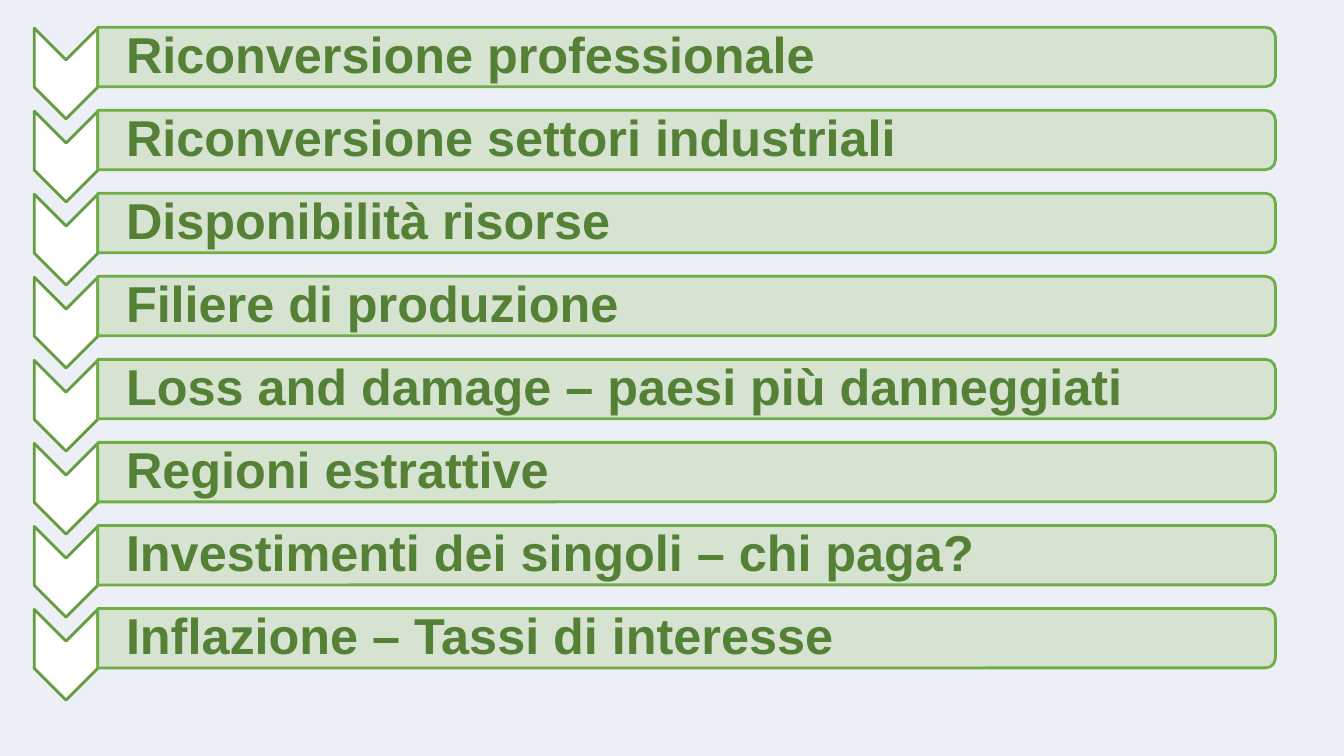
import collections

import pptx
import pptx.dml.color
import pptx.enum.shapes
import pptx.enum.text
import pptx.oxml
import pptx.oxml.ns
import pptx.util

COLORS = {
    "background": "ECF0F6",
    "chevron": "FFFFFF",
    "chevron line": "659C40",
    "bar": "D4E2CE",
    "bar line": "70AD47",
    "text": "548135",
}
TOPICS = [
    "Riconversione professionale",
    "Riconversione settori industriali",
    "Disponibilità risorse",
    "Filiere di produzione",
    "Loss and damage – paesi più danneggiati",
    "Regioni estrattive",
    "Investimenti dei singoli – chi paga?",
    "Inflazione – Tassi di interesse",
]
SLIDE_WIDTH, SLIDE_HEIGHT = 13.33, 7.5
Box = collections.namedtuple("Box", "left top width height")
Shape = pptx.enum.shapes.MSO_SHAPE


def color(name):
    return pptx.dml.color.RGBColor.from_string(COLORS[name])


def inches(*lengths):
    return [pptx.util.Inches(length) for length in lengths]


def add_turned_shape(group, kind, box, name, adjustments):
    """Add a shape turned by 90 degrees that fills the box as seen."""
    left = box.left + (box.width - box.height) / 2
    top = box.top + (box.height - box.width) / 2
    shape = group.shapes.add_shape(kind, *inches(left, top, box.height, box.width))
    shape.rotation = 90
    for index, value in enumerate(adjustments):
        shape.adjustments[index] = value
    shape.shadow.inherit = False
    shape.fill.solid()
    shape.fill.fore_color.rgb = color(name)
    shape.line.color.rgb = color(name + " line")
    shape.line.width = pptx.util.Pt(2)
    return shape


def set_opacity(shape, percent):
    fill_color = shape.fill._xPr.find(".//" + pptx.oxml.ns.qn("a:srgbClr"))
    alpha = pptx.oxml.parse_xml(
        f'<a:alpha {pptx.oxml.ns.nsdecls("a")} val="{percent * 1000}"/>')
    fill_color.append(alpha)


def add_label(group, box, text):
    label = group.shapes.add_textbox(*inches(*box))
    frame = label.text_frame
    frame.text = text
    frame.word_wrap = True
    frame.vertical_anchor = pptx.enum.text.MSO_ANCHOR.MIDDLE
    frame.margin_left = pptx.util.Inches(0.28)
    frame.margin_top = frame.margin_right = frame.margin_bottom = pptx.util.Inches(0.02)
    para = frame.paragraphs[0]
    para.line_spacing = 0.9
    font = para.runs[0].font
    font.name = "Arial"
    font.size = pptx.util.Pt(36)
    font.bold = True
    font.color.rgb = color("text")


def add_topic_row(group, box, text):
    # Chevron: one and a bit rows high, its point reaching into the next row
    chevron_width = 0.63
    chevron = Box(box.left, box.top + 0.01, chevron_width, 0.9)
    add_turned_shape(group, Shape.CHEVRON, chevron, "chevron", [0.5])

    # Bar: the rest of the row, rounded on the right
    bar = Box(box.left + chevron_width, box.top, box.width - chevron_width, 0.59)
    bar_shape = add_turned_shape(
        group, Shape.ROUND_2_SAME_RECTANGLE, bar, "bar", [0.167, 0])
    set_opacity(bar_shape, 90)

    # Label: inside the bar
    add_label(group, Box(bar.left, bar.top + 0.03, bar.width - 0.03, 0.53), text)


def add_topic_list(page, box, topics):
    group = page.shapes.add_group_shape()
    row_height = box.height / len(topics)
    for row, topic in enumerate(topics):
        row_box = Box(box.left, box.top + row * row_height, box.width, row_height)
        add_topic_row(group, row_box, topic)


def main():
    deck = pptx.Presentation()
    deck.slide_width, deck.slide_height = inches(SLIDE_WIDTH, SLIDE_HEIGHT)
    page = deck.slides.add_slide(deck.slide_layouts[6])
    page.background.fill.solid()
    page.background.fill.fore_color.rgb = color("background")
    add_topic_list(page, Box(0.34, 0.27, 12.31, 6.59), TOPICS)
    deck.save("out.pptx")


if __name__ == "__main__":
    main()
